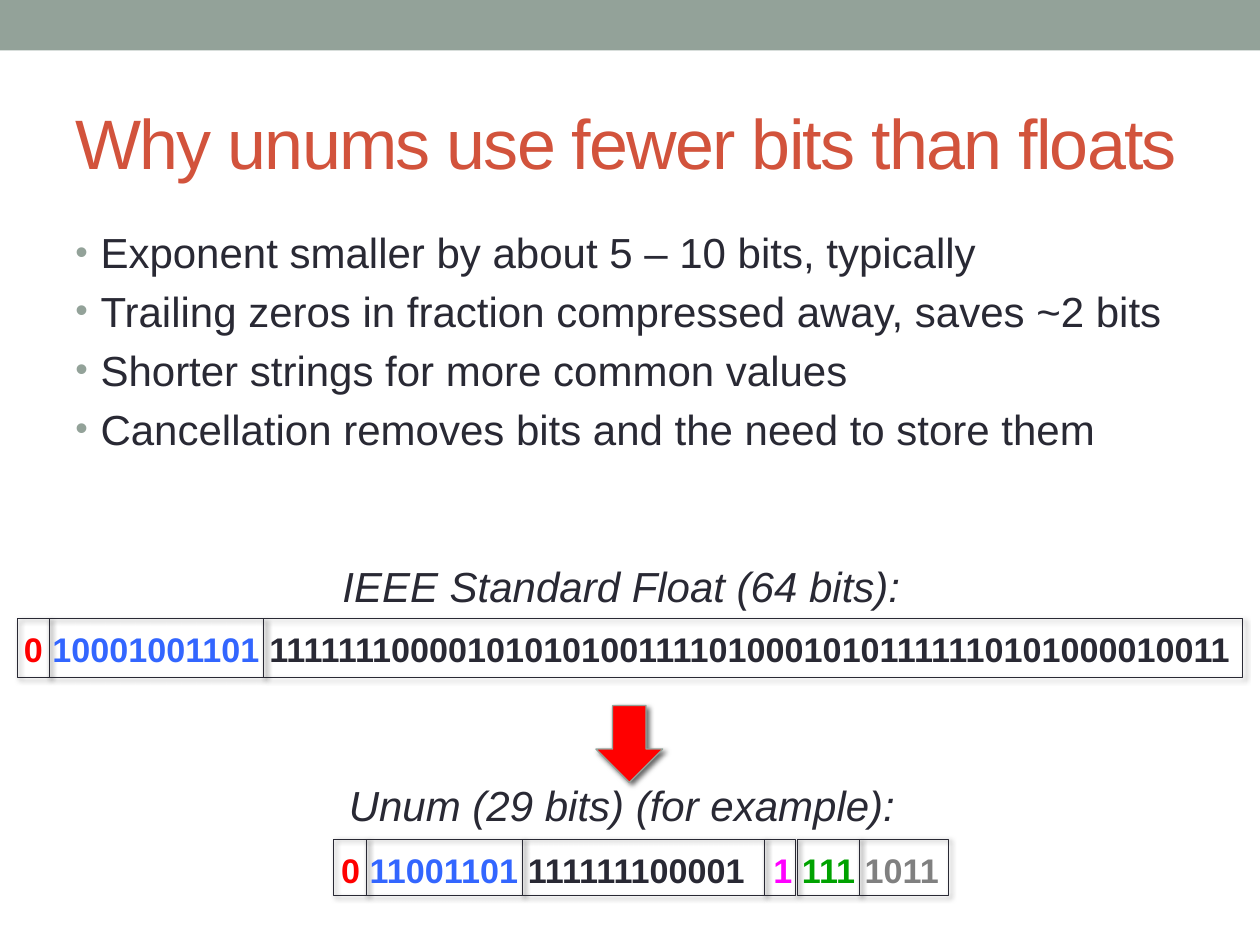
from dataclasses import dataclass
from typing import Optional

from lxml.etree import SubElement
from pptx import Presentation
from pptx.dml.color import RGBColor
from pptx.enum.shapes import MSO_SHAPE
from pptx.enum.text import MSO_ANCHOR
from pptx.oxml.ns import qn
from pptx.util import Emu, Inches, Pt

SLIDE_WIDTH, SLIDE_HEIGHT = Inches(10), Inches(7.5)
COLUMNS, ROWS = 100, 75
FONT = "Arial"
INK, SAGE, BRICK, RED, BLUE = "292934", "93A299", "D2533C", "FF0000", "3366FF"
MAGENTA, GREEN, GREY = "FF00FF", "00A200", "808080"


@dataclass(frozen=True)
class Area:
    """A box in columns and rows of the slide grid."""
    column: float
    row: float
    columns: float
    rows: float

    def box(self) -> tuple[Emu, Emu, Emu, Emu]:
        """Return left, top, width and height."""
        cell_width, cell_height = SLIDE_WIDTH / COLUMNS, SLIDE_HEIGHT / ROWS
        return (Emu(round(self.column * cell_width)), Emu(round(self.row * cell_height)),
                Emu(round(self.columns * cell_width)), Emu(round(self.rows * cell_height)))


@dataclass(frozen=True)
class Style:
    """The look of a run."""
    size: float
    color: str = INK
    bold: bool = False
    italic: bool = False
    spacing: Optional[int] = None


@dataclass(frozen=True)
class BitField:
    """One framed part of a number."""
    column: float
    columns: float
    bits: str
    color: str


@dataclass(frozen=True)
class NumberFormat:
    """A captioned number made of bit fields."""
    caption: str
    caption_area: Area
    frame_row: float
    frame_rows: float
    bits_area: Area
    fields: tuple[BitField, ...]
    tab_column: Optional[float] = None


BULLETS = (
    "Exponent smaller by about 5 – 10 bits, typically",
    "Trailing zeros in fraction compressed away, saves ~2 bits",
    "Shorter strings for more common values",
    "Cancellation removes bits and the need to store them",
)

IEEE_FLOAT = NumberFormat(
    "IEEE Standard Float (64 bits):", Area(26.2, 44, 47.6, 5), 49.1, 4.7,
    Area(0.9, 49.4, 99.1, 4.3),
    (
        BitField(1.4, 2.5, "0 ", RED),
        BitField(3.9, 17, "10001001101 ", BLUE),
        BitField(20.9, 77.7, "1111111000010101010011110100010101111110101000010011", INK),
    ),
)

UNUM = NumberFormat(
    "Unum (29 bits) (for example):", Area(26.7, 61.4, 46.6, 5), 66.6, 4.5,
    Area(26.1, 66.9, 49.6, 4.3),
    (
        BitField(26.5, 2.6, "0 ", RED),
        BitField(29.1, 12.4, "11001101 ", BLUE),
        BitField(41.5, 19.2, "111111100001\t", INK),
        BitField(60.7, 2.4, "1 ", MAGENTA),
        BitField(63.3, 4.9, "111 ", GREEN),
        BitField(68.2, 7.1, "1011", GREY),
    ),
    tab_column=34.3,
)


def rgb(color: str) -> RGBColor:
    """Turn a hex string into a colour."""
    return RGBColor.from_string(color)


def add_run(paragraph, text: str, style: Style) -> None:
    """Add one styled run to a paragraph."""
    run = paragraph.add_run()
    run.text = text
    run.font.name, run.font.size = FONT, Pt(style.size)
    run.font.bold, run.font.italic = style.bold, style.italic
    run.font.color.rgb = rgb(style.color)
    if style.spacing is not None:
        run.font._element.set("spc", str(style.spacing))


def add_text_frame(slide, area: Area, wrap: bool = True):
    """Add a text box and return its frame."""
    frame = slide.shapes.add_textbox(*area.box()).text_frame
    frame.word_wrap = wrap
    return frame


def add_shadow(shape) -> None:
    """Cast a soft shadow to the lower right."""
    shape.shadow.inherit = False
    effects = shape._element.spPr.find(qn("a:effectLst"))
    shadow = SubElement(effects, qn("a:outerShdw"), blurRad=str(Pt(3)), dist=str(Pt(2)),
                        dir="2700000", algn="tl", rotWithShape="0")
    black = SubElement(shadow, qn("a:srgbClr"), val="000000")
    SubElement(black, qn("a:alpha"), val="60000")


def add_figure(slide, kind: MSO_SHAPE, area: Area, fill: Optional[str] = None,
               line: Optional[str] = None, line_width: float = 0.5):
    """Add a preset shape; outlined shapes cast a shadow."""
    shape = slide.shapes.add_shape(kind, *area.box())
    if fill:
        shape.fill.solid()
        shape.fill.fore_color.rgb = rgb(fill)
    else:
        shape.fill.background()
    if line:
        shape.line.color.rgb, shape.line.width = rgb(line), Pt(line_width)
        add_shadow(shape)
    else:
        shape.line.fill.background()
        shape.shadow.inherit = False
    return shape


def set_bullet(paragraph) -> None:
    """Give a paragraph a hanging bullet and proportional space before."""
    properties = paragraph._p.get_or_add_pPr()
    properties.set("marL", str(Inches(0.2)))
    properties.set("indent", str(Inches(-0.2)))
    SubElement(SubElement(properties, qn("a:spcBef")), qn("a:spcPct"), val="20000")
    SubElement(SubElement(properties, qn("a:buClr")), qn("a:srgbClr"), val=SAGE)
    SubElement(properties, qn("a:buSzPct"), val="85000")
    SubElement(properties, qn("a:buFont"), typeface=FONT)
    SubElement(properties, qn("a:buChar"), char="•")


def add_bullets(slide, area: Area, lines: tuple[str, ...]) -> None:
    """Add the bulleted list."""
    frame = add_text_frame(slide, area)
    for index, line in enumerate(lines):
        paragraph = frame.add_paragraph() if index else frame.paragraphs[0]
        set_bullet(paragraph)
        add_run(paragraph, line, Style(24))


def add_number(slide, number: NumberFormat) -> None:
    """Add the caption, field frames and bits of a number."""
    caption = add_text_frame(slide, number.caption_area, wrap=False)
    add_run(caption.paragraphs[0], number.caption, Style(24, italic=True))
    for field in number.fields:
        frame_area = Area(field.column, number.frame_row, field.columns, number.frame_rows)
        add_figure(slide, MSO_SHAPE.RECTANGLE, frame_area, line=INK)
    bits = add_text_frame(slide, number.bits_area).paragraphs[0]
    if number.tab_column is not None:
        tabs = SubElement(bits._p.get_or_add_pPr(), qn("a:tabLst"))
        position = round(number.tab_column * SLIDE_WIDTH / COLUMNS)
        SubElement(tabs, qn("a:tab"), pos=str(position), algn="l")
    for field in number.fields:
        add_run(bits, field.bits, Style(19.5, field.color, bold=True))


def main() -> None:
    """Build and save the slide."""
    deck = Presentation()
    deck.slide_width, deck.slide_height = SLIDE_WIDTH, SLIDE_HEIGHT
    slide = deck.slides.add_slide(deck.slide_layouts[6])
    add_figure(slide, MSO_SHAPE.RECTANGLE, Area(0, 0, COLUMNS, 4), fill=SAGE)
    title = add_text_frame(slide, Area(5, 5.8, 90, 10.8))
    title.vertical_anchor = MSO_ANCHOR.MIDDLE
    add_run(title.paragraphs[0], "Why unums use fewer bits than floats",
            Style(40, BRICK, spacing=-100))
    add_bullets(slide, Area(5, 17.5, 90, 53.3), BULLETS)
    add_number(slide, IEEE_FLOAT)
    add_figure(slide, MSO_SHAPE.DOWN_ARROW, Area(47.3, 56, 5.3, 6.1), RED, SAGE, 0.75)
    add_number(slide, UNUM)
    deck.save("out.pptx")


if __name__ == "__main__":
    main()
